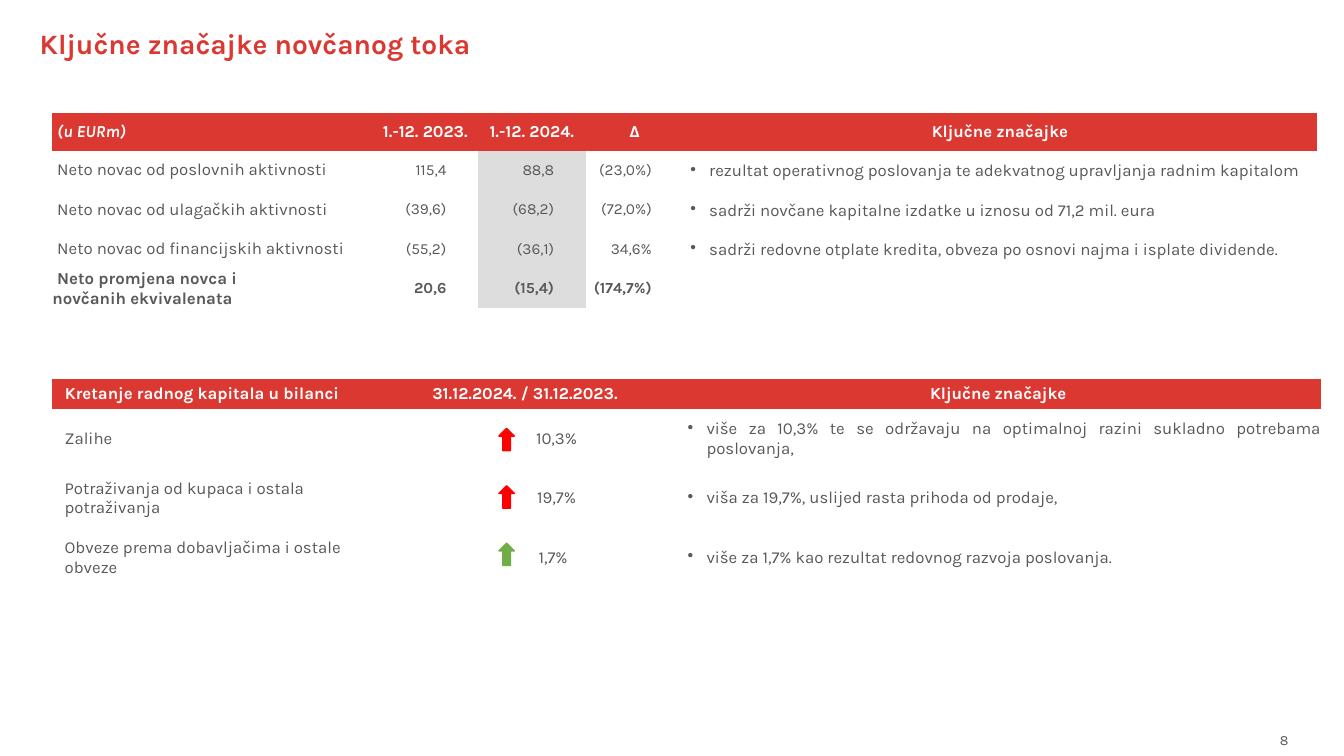
from lxml import etree
from pptx import Presentation
from pptx.dml.color import RGBColor
from pptx.enum import shapes, text
from pptx.oxml import ns
from pptx.util import Pt

COLORS = {"brand": "DB3832", "white": "FFFFFF", "body": "595959",
          "band": "DDDDDD", "red": "FF0000", "green": "70AD47"}
NO_STYLE = "{2D5ABB26-0587-4C30-8999-92F81FD0307C}"
LEFT, CENTER, RIGHT, JUSTIFY = (text.PP_ALIGN.LEFT, text.PP_ALIGN.CENTER,
                                text.PP_ALIGN.RIGHT, text.PP_ALIGN.JUSTIFY)


def write(box, words, color="body", size=12, bold=False, italic=False,
          align=LEFT, margins=(0, 0, 0, 0), fill=None, bullet=False, indent=0,
          spacing=None, after=None):
    """Fill a table cell or text box; margins run left, top, right, bottom."""
    box.margin_left, box.margin_top, box.margin_right, box.margin_bottom = map(Pt, margins)
    box.vertical_anchor = text.MSO_ANCHOR.MIDDLE
    if fill:
        box.fill.solid()
        box.fill.fore_color.rgb = RGBColor.from_string(COLORS[fill])
    tf = getattr(box, "text_frame", box)
    tf.word_wrap = True
    tf.text = words
    p = tf.paragraphs[0]
    p.alignment, p.line_spacing, p.space_after = align, spacing, after
    pPr = p._p.get_or_add_pPr()
    if bullet:
        pPr.set("marL", str(Pt(13.5)))
        pPr.set("indent", str(-Pt(13.5)))
        etree.SubElement(pPr, ns.qn("a:buChar"), char="•")
    elif indent:
        pPr.set("indent", str(Pt(indent)))
    for r in p.runs:
        r.font.name, r.font.size = "Karla", Pt(size)
        r.font.bold, r.font.italic = bold, italic
        r.font.color.rgb = RGBColor.from_string(COLORS[color])


def add_grid(left, top, widths, heights):
    frame = s.shapes.add_table(len(heights), len(widths), Pt(left), Pt(top),
                               Pt(sum(widths)), Pt(sum(heights)))
    table = frame.table
    table.first_row = table.horz_banding = False
    table._tbl.tblPr.find(ns.qn("a:tableStyleId")).text = NO_STYLE
    for column, width in zip(table.columns, widths):
        column.width = Pt(width)
    for row, height in zip(table.rows, heights):
        row.height = Pt(height)
    return table


prs = Presentation()
prs.slide_width, prs.slide_height = Pt(960), Pt(540)
s = prs.slides.add_slide(prs.slide_layouts[6])

# Working capital
capital = add_grid(37.4, 270.7, [230.4, 214.6, 461.5], [21.6] + [42.4] * 3)
header = dict(color="white", bold=True, fill="brand")
for c, (words, align, inset) in enumerate([
        ("Kretanje radnog kapitala u bilanci", LEFT, 9),
        ("31.12.2024. / 31.12.2023.", CENTER, 0),
        ("Ključne značajke", CENTER, 0)]):
    write(capital.cell(0, c), words, align=align, margins=(inset, 0, 0, 0), **header)

capital_rows = [
    ("Zalihe", "10,3%", 45, "red",
     "više za 10,3% te se održavaju na optimalnoj razini sukladno potrebama poslovanja,"),
    ("Potraživanja od kupaca i ostala potraživanja", "19,7%", 45, "red",
     "viša za 19,7%, uslijed rasta prihoda od prodaje,"),
    ("Obveze prema dobavljačima i ostale obveze", "1,7%", 40, "green",
     "više za 1,7% kao rezultat redovnog razvoja poslovanja."),
]
for i, (item, change, inset, color, note) in enumerate(capital_rows):
    write(capital.cell(i + 1, 0), item, margins=(8.8, 0, 0, 0), fill="white")
    write(capital.cell(i + 1, 1), change, align=CENTER, margins=(inset, 0, 0, 0), fill="white")
    write(capital.cell(i + 1, 2), note, align=JUSTIFY, margins=(8.8, 0, 0, 0),
          fill="white", bullet=True)
    arrow = s.shapes.add_shape(shapes.MSO_SHAPE.UP_ARROW, Pt(356.4), Pt(306 + 41 * i),
                               Pt(11), Pt(16))
    arrow.shadow.inherit = False
    arrow.fill.solid()
    arrow.fill.fore_color.rgb = arrow.line.color.rgb = RGBColor.from_string(COLORS[color])
    arrow.line.width = Pt(1)

# Cash flow
cash = add_grid(37.4, 80.7, [229, 75, 77, 69.8, 452.4], [26.9] + [28.2] * 4)
write(cash.cell(0, 0), "(u EURm)", italic=True, margins=(3.5, 0, 0, 0), **header)
for c, words in enumerate(["1.-12. 2023.", "1.-12. 2024.", "Δ", "Ključne značajke"], 1):
    write(cash.cell(0, c), words, align=CENTER, **header)

cash_rows = [
    ("Neto novac od poslovnih aktivnosti", "115,4", "88,8", "(23,0%)",
     "rezultat operativnog poslovanja te adekvatnog upravljanja radnim kapitalom"),
    ("Neto novac od ulagačkih aktivnosti", "(39,6)", "(68,2)", "(72,0%)",
     "sadrži novčane kapitalne izdatke u iznosu od 71,2 mil. eura"),
    ("Neto novac od financijskih aktivnosti", "(55,2)", "(36,1)", "34,6%",
     "sadrži redovne otplate kredita, obveza po osnovi najma i isplate dividende."),
    ("Neto promjena novca i novčanih ekvivalenata", "20,6", "(15,4)", "(174,7%)", ""),
]
for i, (item, *figures, note) in enumerate(cash_rows, 1):
    total = i == len(cash_rows)
    write(cash.cell(i, 0), item, bold=total, indent=3.5,
          margins=(0, 0, 60 if total else 0, 0))
    for c, figure in enumerate(figures, 1):
        write(cash.cell(i, c), figure, size=11, bold=total, align=RIGHT,
              margins=(3, 0, 22.5, 0), fill="band" if c == 2 else None)
    write(cash.cell(i, 4), note, margins=(5, 0, 5, 0), bullet=bool(note),
          spacing=1.07, after=Pt(8))

# Title and page number
title = s.shapes.add_textbox(Pt(28.4), Pt(14.6), Pt(401), Pt(32.4))
write(title.text_frame, "Ključne značajke novčanog toka", "brand", 20, True,
      margins=(0, 3.6, 7.2, 3.6))
page = s.shapes.add_textbox(Pt(907.2), Pt(519.1), Pt(52.8), Pt(28.8))
write(page.text_frame, "8", size=10, margins=(7.2, 3.6, 7.2, 3.6))
page.text_frame.vertical_anchor = text.MSO_ANCHOR.TOP

prs.save("out.pptx")
